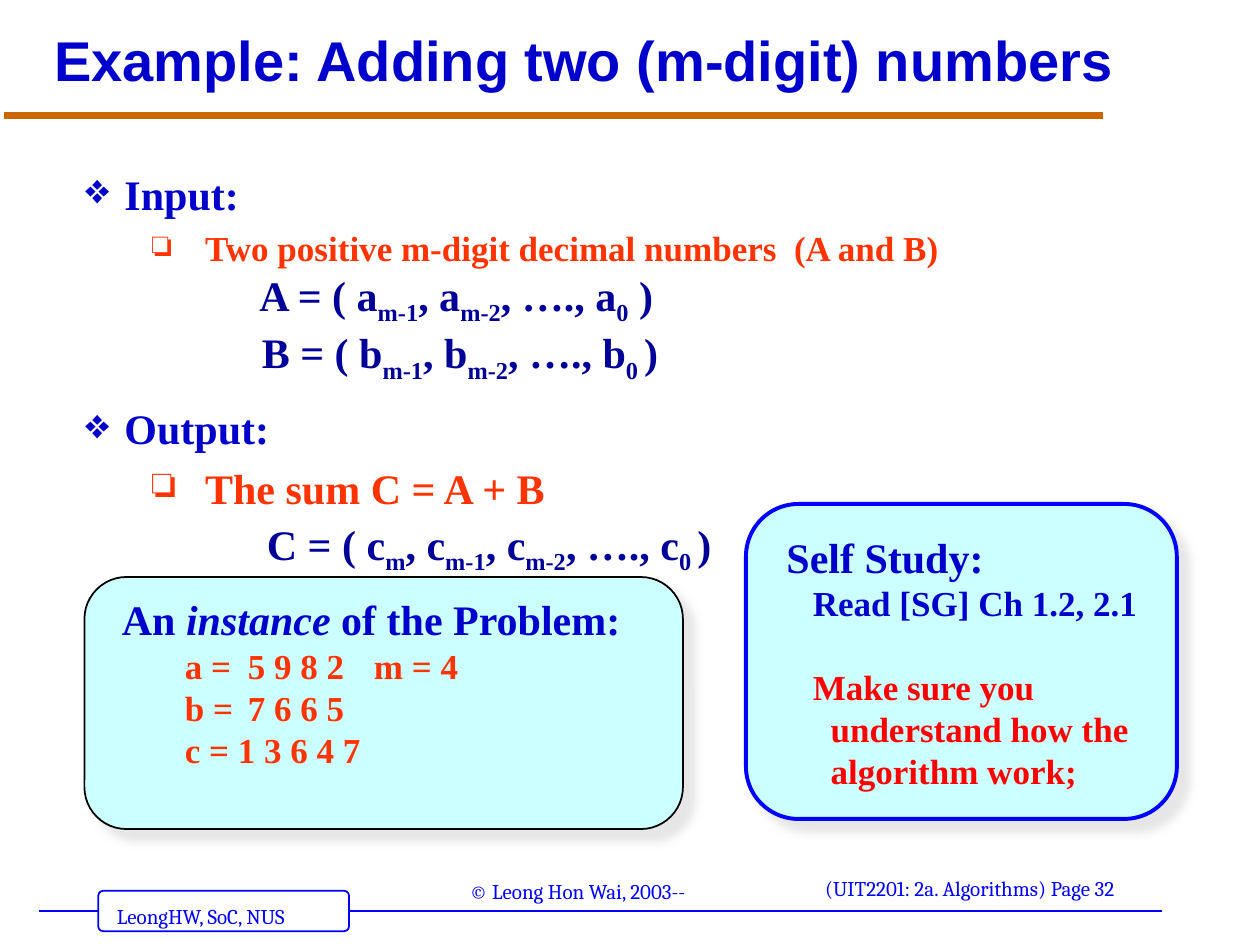
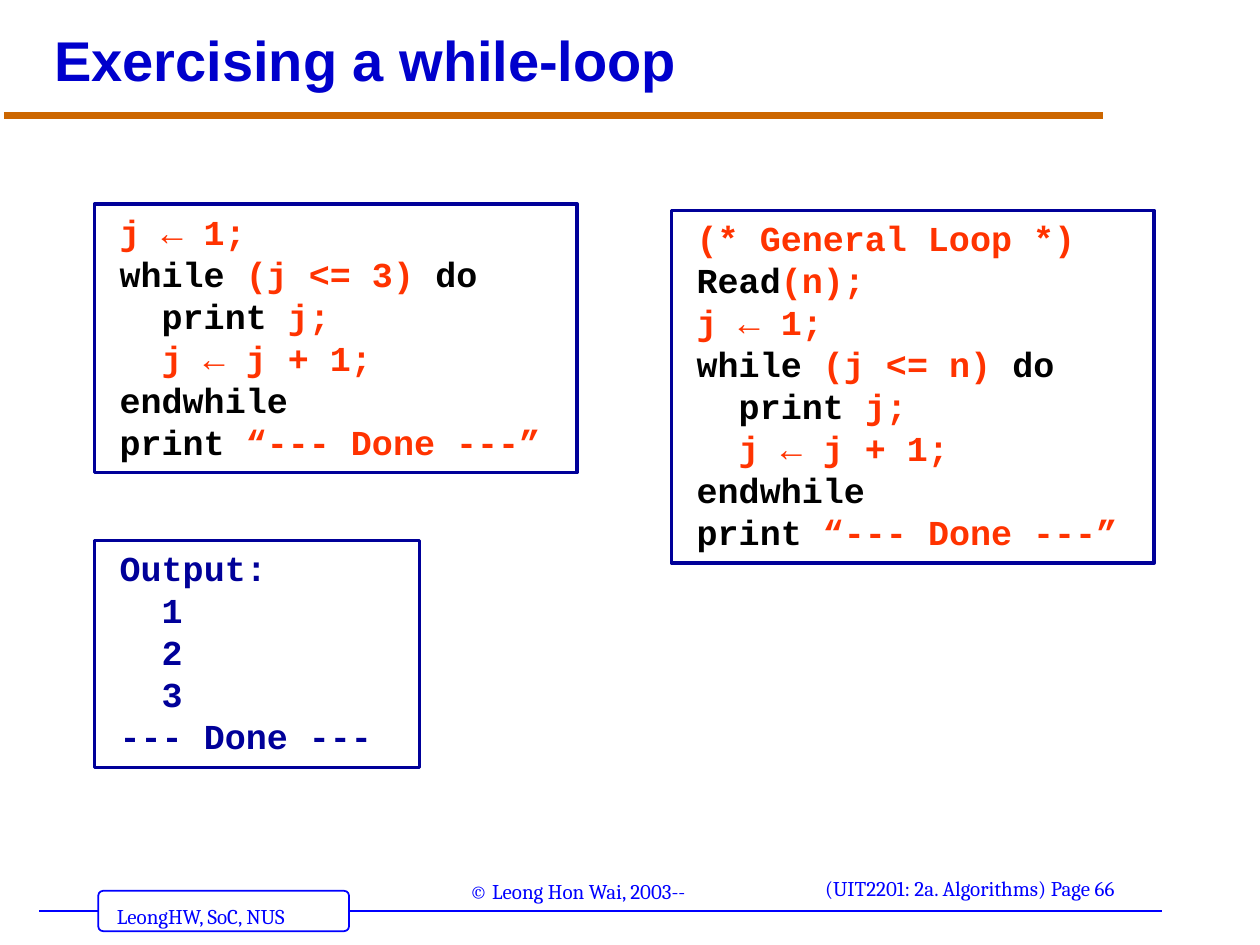
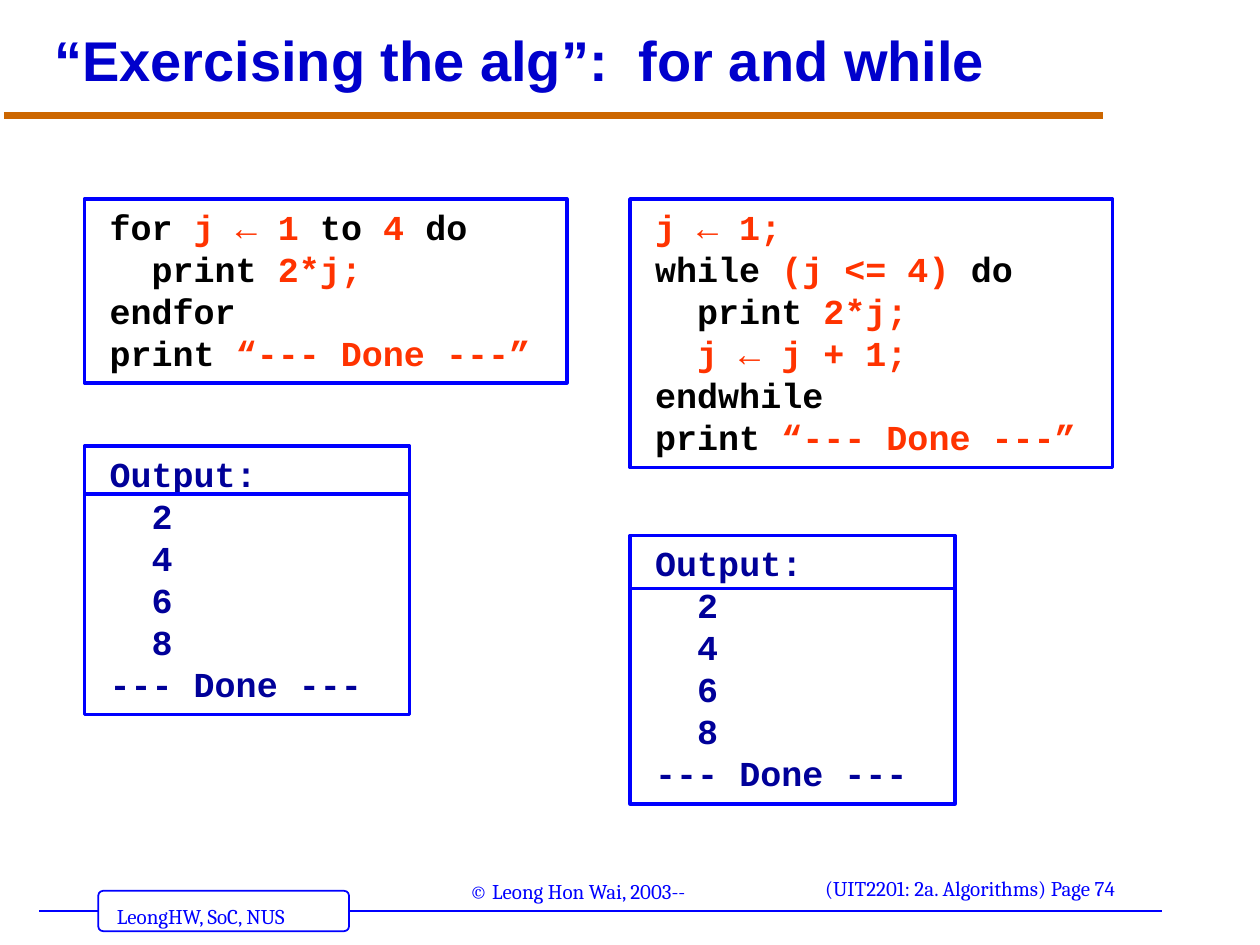
from dataclasses import dataclass

import lxml.etree
import pptx
import pptx.dml.color
import pptx.enum.shapes
import pptx.enum.text
import pptx.oxml
import pptx.oxml.ns
import pptx.util

Inches = pptx.util.Inches
Pt = pptx.util.Pt
SHAPES = pptx.enum.shapes.MSO_SHAPE
ANCHOR = pptx.enum.text.MSO_ANCHOR
qn = pptx.oxml.ns.qn


@dataclass(frozen=True)
class Theme:
    heading: str = "0000CC"
    rule: str = "CC6600"
    frame: str = "0000FF"
    navy: str = "000099"
    accent: str = "FF3300"
    warning: str = "FF0000"
    panel: str = "CCFFFF"
    shadow: str = "CECECE"
    black: str = "000000"
    white: str = "FFFFFF"
    title_font: str = "Arial"
    body_font: str = "Times New Roman"
    code_font: str = "Courier New"
    footer_font: str = "Cambria"
    title_size: int = 32
    large: int = 24
    normal: int = 20
    small: int = 12


THEME = Theme()


def rgb(colour):
    return pptx.dml.color.RGBColor.from_string(colour)


def add_run(paragraph, text, font, size, colour, bold=True, italic=False, subscript=False):
    run = paragraph.add_run()
    run.text = text
    run.font.name = font
    run.font.size = Pt(size)
    run.font.bold = bold
    run.font.italic = italic
    run.font.color.rgb = rgb(colour)
    if subscript:
        run.font._element.set("baseline", "-25000")


def next_paragraph(frame):
    return frame.paragraphs[0] if not frame.paragraphs[0].runs else frame.add_paragraph()


def set_margins(frame, left, top, right, bottom):
    frame.margin_left, frame.margin_top = Inches(left), Inches(top)
    frame.margin_right, frame.margin_bottom = Inches(right), Inches(bottom)


def set_indent(paragraph, left, first=0):
    properties = paragraph._p.get_or_add_pPr()
    properties.set("marL", str(Inches(left)))
    properties.set("indent", str(Inches(first)))


def add_tab_stops(paragraph, stops):
    tabs = lxml.etree.SubElement(paragraph._p.get_or_add_pPr(), qn("a:tabLst"))
    for stop in stops:
        lxml.etree.SubElement(tabs, qn("a:tab"), pos=str(Inches(stop)), algn="l")


def add_rule(slide, start, end, colour, width):
    rule = slide.shapes.add_connector(
        pptx.enum.shapes.MSO_CONNECTOR.STRAIGHT, *map(Inches, start + end))
    rule.line.color.rgb = rgb(colour)
    rule.line.width = Pt(width)
    lxml.etree.SubElement(rule._element.spPr, qn("a:effectLst"))


def add_box(slide, place, preset, line, width, fill=None):
    box = slide.shapes.add_shape(preset, *map(Inches, place))
    box.shadow.inherit = False
    box.line.color.rgb = rgb(line)
    box.line.width = Pt(width)
    if fill:
        box.fill.solid()
        box.fill.fore_color.rgb = rgb(fill)
    else:
        box.fill.background()
    box.text_frame.word_wrap = True
    box.text_frame.paragraphs[0].alignment = pptx.enum.text.PP_ALIGN.LEFT
    return box


def add_footer_text(slide, place, text):
    frame = slide.shapes.add_textbox(*map(Inches, place)).text_frame
    frame.word_wrap = False
    add_run(frame.paragraphs[0], text, THEME.footer_font, THEME.small, THEME.frame, bold=False)


def add_slide(deck, title, page):
    slide = deck.slides.add_slide(deck.slide_layouts.get_by_name("Title Only"))
    add_rule(slide, (0.31, 7.23), (9.22, 7.23), THEME.frame, 1)
    badge = add_box(slide, (0.78, 7.07, 1.99, 0.32), SHAPES.ROUNDED_RECTANGLE,
                    THEME.frame, 1, THEME.white)
    badge.adjustments[0] = 0.12
    add_rule(slide, (0.03, 0.92), (8.75, 0.92), THEME.rule, 4)
    add_footer_text(slide, (0.83, 7.12, 1.78, 0.3), "LeongHW, SoC, NUS")
    add_footer_text(slide, (6.45, 6.9, 2.76, 0.3), f"(UIT2201: 2a. Algorithms) Page {page}")
    add_footer_text(slide, (3.63, 6.92, 2.06, 0.3), "© Leong Hon Wai, 2003--")

    heading = slide.shapes.title
    heading.left, heading.top = Inches(0.33), Inches(0.17)
    heading.width, heading.height = Inches(8.96), Inches(0.67)
    frame = heading.text_frame
    frame.auto_size = pptx.enum.text.MSO_AUTO_SIZE.NONE
    frame.vertical_anchor = ANCHOR.MIDDLE
    paragraph = frame.paragraphs[0]
    paragraph.alignment = pptx.enum.text.PP_ALIGN.LEFT
    paragraph.line_spacing = 0.9
    add_run(paragraph, title, THEME.title_font, THEME.title_size, THEME.heading)
    return slide


def add_bullet(frame, text, symbol, indent, size, colour, space):
    paragraph = next_paragraph(frame)
    paragraph.line_spacing = 0.9
    paragraph.space_before = Pt(space)
    set_indent(paragraph, *indent)
    lxml.etree.SubElement(paragraph._p.get_or_add_pPr(), qn("a:buChar"), char=symbol)
    add_run(paragraph, text, THEME.body_font, size, colour)


def add_topic(frame, text, space=0):
    add_bullet(frame, text, "❖", (0.31, -0.31), THEME.large, THEME.heading, space)


def add_detail(frame, text, size, space):
    add_bullet(frame, text, "❏", (0.95, -0.42), size, THEME.accent, space)


def add_formula(frame, formula, indent, space=0):
    paragraph = next_paragraph(frame)
    paragraph.space_before = Pt(space)
    set_indent(paragraph, indent)
    for index, part in enumerate(formula.split("_")):
        add_run(paragraph, part, THEME.body_font, THEME.large, THEME.navy,
                subscript=index % 2 == 1)


def add_panel(slide, place, line, width, bottom=0.05):
    panel = add_box(slide, place, SHAPES.ROUNDED_RECTANGLE, line, width, THEME.panel)
    effects = panel._element.spPr.find(qn("a:effectLst"))
    shadow = lxml.etree.SubElement(effects, qn("a:outerShdw"), blurRad=str(Pt(5)),
                                   dist=str(Pt(8.5)), dir="2700000", algn="tl", rotWithShape="0")
    tint = lxml.etree.SubElement(shadow, qn("a:srgbClr"), val=THEME.shadow)
    lxml.etree.SubElement(tint, qn("a:alpha"), val="50000")
    frame = panel.text_frame
    frame.vertical_anchor = ANCHOR.MIDDLE
    set_margins(frame, 0.2, 0.05, 0.05, bottom)
    return frame


def add_panel_line(frame, text, colour, indent=0, space=0, tabs=()):
    paragraph = next_paragraph(frame)
    paragraph.alignment = pptx.enum.text.PP_ALIGN.LEFT
    paragraph.space_before = Pt(space)
    set_indent(paragraph, indent)
    if tabs:
        add_tab_stops(paragraph, tabs)
    add_run(paragraph, text, THEME.body_font, THEME.normal, colour)


def add_listing(slide, place, lines, frame_colour, colours):
    frame = add_box(slide, place, SHAPES.RECTANGLE, frame_colour, 2).text_frame
    frame.vertical_anchor = ANCHOR.TOP
    set_margins(frame, 0.2, 0.05, 0.2, 0.05)
    for line in lines:
        paragraph = next_paragraph(frame)
        paragraph.alignment = pptx.enum.text.PP_ALIGN.LEFT
        for index, part in enumerate(line.split("|")):
            if part:
                add_run(paragraph, part, THEME.code_font, THEME.normal, colours[index % 2])


def add_code(slide, place, lines, frame_colour):
    add_listing(slide, place, lines, frame_colour, (THEME.black, THEME.accent))


def add_output(slide, place, values, frame_colour):
    lines = ["Output:", *(f"  {value}" for value in values), "--- Done ---"]
    add_listing(slide, place, lines, frame_colour, (THEME.navy, THEME.navy))


DONE = "print| “--- Done ---”"


def while_loop(limit, printed):
    return ["|j ← 1;", f"while| (j <= {limit}) |do", f"  print| {printed};",
            "|  j ← j + 1;", "endwhile", DONE]


def build_addition(deck):
    slide = add_slide(deck, "Example: Adding two (m-digit) numbers", 32)
    problem = slide.shapes.add_textbox(*map(Inches, (0.58, 1.33, 8.5, 3.25))).text_frame
    problem.word_wrap = True
    add_topic(problem, "Input:")
    add_detail(problem, "Two positive m-digit decimal numbers  (A and B)", THEME.normal, 7)
    add_formula(problem, "A = ( a_m-1_, a_m-2_, …., a_0_ )", 1.38)
    add_formula(problem, "B = ( b_m-1_, b_m-2_, …., b_0 _)", 1.4)
    add_topic(problem, "Output:", 14)
    add_detail(problem, "The sum C = A + B", THEME.large, 8)
    add_formula(problem, "C = ( c_m_, c_m-1_, c_m-2_, …., c_0 _)", 1.44, 3)

    instance = add_panel(slide, (0.67, 4.58, 4.75, 2), THEME.black, 1, bottom=0.38)
    lead = instance.paragraphs[0]
    for text, italic in (("An ", False), ("instance", True), (" of the Problem:", False)):
        add_run(lead, text, THEME.body_font, THEME.large, THEME.heading, italic=italic)
    for line in ("\ta =\t5 9 8 2\tm = 4", "\tb =\t7 6 6 5", "\tc = 1 3 6 4 7"):
        add_panel_line(instance, line, THEME.accent, tabs=(0.84, 1.48, 3.09))

    study = add_panel(slide, (5.92, 4, 3.42, 2.5), THEME.frame, 2.25)
    add_run(study.paragraphs[0], "Self Study:", THEME.body_font, THEME.large, THEME.heading)
    add_panel_line(study, "Read [SG] Ch 1.2, 2.1", THEME.heading, 0.21)
    add_panel_line(study, "Make sure you", THEME.warning, 0.21, space=24)
    add_panel_line(study, "understand how the", THEME.warning, 0.35)
    add_panel_line(study, "algorithm work;", THEME.warning, 0.35)


def build_while_loop(deck):
    slide = add_slide(deck, "Exercising a while-loop", 66)
    add_code(slide, (0.75, 1.62, 3.83, 2.13), while_loop(3, "j"), THEME.navy)
    add_output(slide, (0.75, 4.29, 2.58, 1.8), (1, 2, 3), THEME.navy)
    general = ["|(* General Loop *)", "Read|(n);", *while_loop("n", "j")]
    add_code(slide, (5.33, 1.67, 3.83, 2.8), general, THEME.navy)


def build_for_and_while(deck):
    slide = add_slide(deck, "“Exercising the alg”:  for and while", 74)
    for_loop = ["for| j ← 1 |to| 4 |do", "  print| 2*j;", "endfor", DONE]
    columns = (
        (0.67, for_loop, 1.46, 3.54, 3.92),
        (5, while_loop(4, "2*j"), 2.13, 4.25, 4.67),
    )
    for left, code, code_height, output_top, divider in columns:
        add_code(slide, (left, 1.58, 3.83, code_height), code, THEME.frame)
        add_output(slide, (left, output_top, 2.58, 2.13), (2, 4, 6, 8), THEME.frame)
        add_rule(slide, (left, divider), (left + 2.58, divider), THEME.frame, 2)


def main():
    deck = pptx.Presentation()
    deck.slide_width, deck.slide_height = Inches(10), Inches(7.5)
    build_addition(deck)
    build_while_loop(deck)
    build_for_and_while(deck)
    deck.save("out.pptx")


if __name__ == "__main__":
    main()
